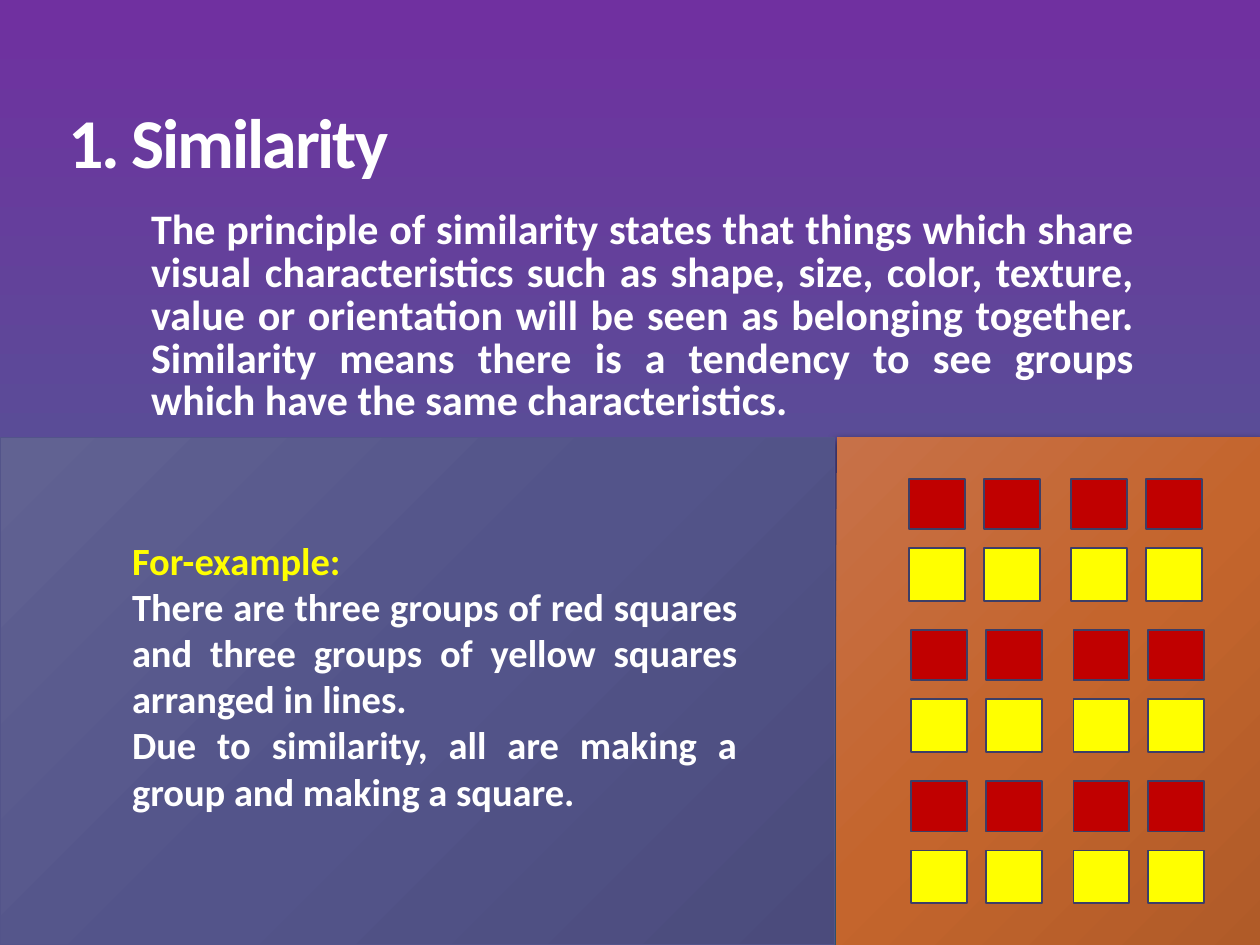
"""Build the slide on the similarity principle, with a grid of red and yellow squares."""
from lxml.etree import SubElement
from pptx import Presentation
from pptx.dml.color import RGBColor
from pptx.enum.shapes import MSO_SHAPE as Shape
from pptx.enum.text import MSO_ANCHOR as Anchor, PP_ALIGN as Align
from pptx.oxml.ns import qn
from pptx.util import Pt

WHITE = RGBColor(0xFF, 0xFF, 0xFF)
YELLOW = RGBColor(0xFF, 0xFF, 0x00)
RED = RGBColor(0xC0, 0x00, 0x00)
SQUARE_LINE = RGBColor(0x3D, 0x3E, 0x66)
PANEL_LINE = RGBColor(0x53, 0x54, 0x8A)

BACKGROUND = [(0, "7030A0"), (100, "406F8D")]
ORANGE = [(0, "C77148"), (50, "C4652D"), (100, "B05B28")]
INDIGO = [(0, "616292"), (50, "53548A"), (100, "4B4B7C")]

TITLE = "1. Similarity"
PRINCIPLE = (
    "The principle of similarity states that things which share visual characteristics "
    "such as shape, size, color, texture, value or orientation will be seen as belonging "
    "together. Similarity means there is a tendency to see groups which have the same "
    "characteristics."
)
EXAMPLE = [
    ("For-example:", YELLOW),
    ("There are three groups of red squares and three groups of yellow squares "
     "arranged in lines.", WHITE),
    ("Due to similarity, all are making a group and making a square.", WHITE),
]

BAND_LEFTS = [519.6, 520.8, 520.8]
BAND_TOP, BAND_PITCH = 273.6, 86.4
COLUMN_OFFSETS = [0, 42.8, 92.6, 135.4]
SQUARE_WIDTH = 31.8
ROWS = [(0, 28.8, RED), (39.6, 30.2, YELLOW)]


def set_gradient(fill, element, stops, angle):
    fill.gradient()
    fill.gradient_angle = 360 - angle
    stop_list = next(element.iter(qn("a:gsLst")))
    stop_list.clear()
    for position, color in stops:
        stop = SubElement(stop_list, qn("a:gs"), pos=str(position * 1000))
        SubElement(stop, qn("a:srgbClr"), val=color)


def add_rectangle(shapes, left, top, width, height):
    shape = shapes.add_shape(Shape.RECTANGLE, Pt(left), Pt(top), Pt(width), Pt(height))
    shape.shadow.inherit = False
    return shape


def add_panel(slide, left, width, stops):
    panel = add_rectangle(slide.shapes, left, 250, width, 290)
    set_gradient(panel.fill, panel.element, stops, 45)
    return panel


def add_shadow(shape):
    effects = next(shape.element.iter(qn("a:effectLst")))
    shadow = SubElement(effects, qn("a:outerShdw"), blurRad=str(Pt(4.5)),
                        dist=str(Pt(1.5)), dir="5400000", rotWithShape="0")
    color = SubElement(shadow, qn("a:srgbClr"), val="000000")
    SubElement(color, qn("a:alpha"), val="63000")


def format_paragraph(paragraph, text, size, color, align, spacing=None):
    paragraph.text = text
    paragraph.alignment = align
    paragraph.line_spacing = spacing
    font = paragraph.font
    font.name, font.size, font.bold = "Calibri", Pt(size), True
    font.color.rgb = color


def add_text(slide, left, top, width, height):
    box = slide.shapes.add_textbox(Pt(left), Pt(top), Pt(width), Pt(height))
    box.text_frame.word_wrap = True
    return box.text_frame


def add_title(slide):
    title = slide.shapes.title
    title.left, title.top, title.width, title.height = Pt(31.7), Pt(18.7), Pt(636.5), Pt(130.3)
    title.text_frame.vertical_anchor = Anchor.MIDDLE
    paragraph = title.text_frame.paragraphs[0]
    format_paragraph(paragraph, TITLE, 40, WHITE, Align.LEFT, 0.85)
    paragraph.runs[0]._r.get_or_add_rPr().set("spc", "-120")


def add_squares(slide):
    group = slide.shapes.add_group_shape()
    for band, left in enumerate(BAND_LEFTS):
        for row_offset, height, color in ROWS:
            top = BAND_TOP + band * BAND_PITCH + row_offset
            for offset in COLUMN_OFFSETS:
                square = add_rectangle(group.shapes, left + offset, top, SQUARE_WIDTH, height)
                square.fill.solid()
                square.fill.fore_color.rgb = color
                square.line.color.rgb = SQUARE_LINE
                square.line.width = Pt(1)


def main():
    presentation = Presentation()
    presentation.slide_width, presentation.slide_height = Pt(720), Pt(540)
    slide = presentation.slides.add_slide(presentation.slide_layouts[5])
    set_gradient(slide.background.fill, slide.element, BACKGROUND, 90)

    orange_panel = add_panel(slide, 478, 243.4, ORANGE)
    orange_panel.line.fill.background()
    add_shadow(orange_panel)
    indigo_panel = add_panel(slide, 0, 477, INDIGO)
    indigo_panel.line.color.rgb = PANEL_LINE
    indigo_panel.line.width = Pt(0.75)

    add_title(slide)
    principle = add_text(slide, 72, 116.6, 583.2, 387.4)
    principle.margin_left = Pt(14.4)
    format_paragraph(principle.paragraphs[0], PRINCIPLE, 24, WHITE, Align.JUSTIFY, 0.85)

    example = add_text(slide, 68.4, 303.1, 360, 167)
    for index, (text, color) in enumerate(EXAMPLE):
        paragraph = example.add_paragraph() if index else example.paragraphs[0]
        format_paragraph(paragraph, text, 22, color, Align.JUSTIFY)

    add_squares(slide)
    presentation.save("out.pptx")


if __name__ == "__main__":
    main()
